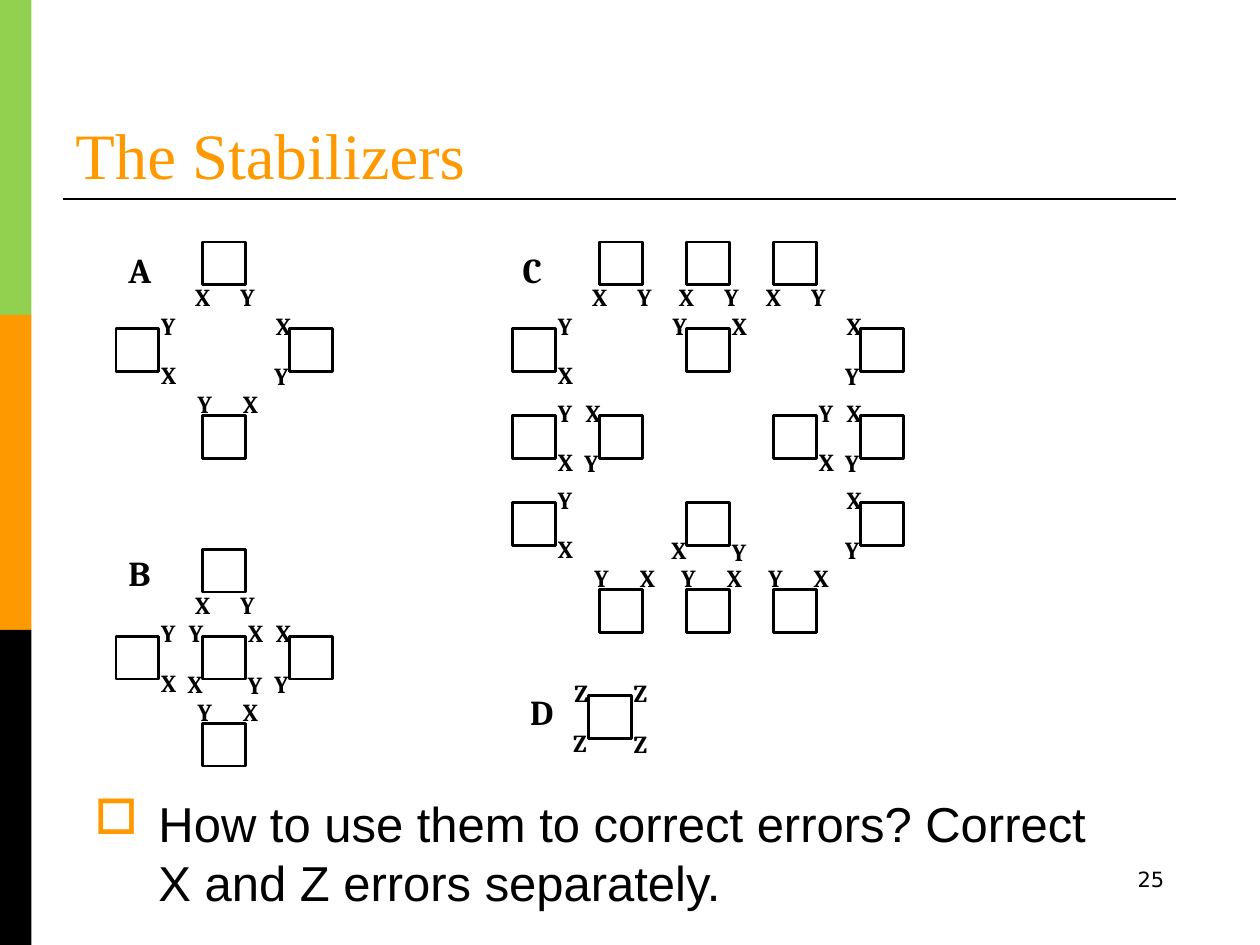
from lxml import etree
from pptx import Presentation
from pptx.dml.color import RGBColor
from pptx.enum.shapes import MSO_CONNECTOR, MSO_SHAPE
from pptx.enum.text import MSO_ANCHOR, MSO_AUTO_SIZE, PP_ALIGN
from pptx.oxml.ns import qn
from pptx.util import Inches, Pt

BLACK = RGBColor(0x00, 0x00, 0x00)
WHITE = RGBColor(0xFF, 0xFF, 0xFF)
GREEN = RGBColor(0x92, 0xD0, 0x50)
ORANGE = RGBColor(0xFF, 0x99, 0x00)

SIDE = 0.34   # edge of a square
PITCH = 0.69  # distance between neighbouring squares

deck = Presentation()
deck.slide_width, deck.slide_height = Inches(10), Inches(7.5)
page = deck.slides.add_slide(deck.slide_layouts[6])


def add_text(text, left, top, width, height, font, size, color=BLACK,
             bold=False, wrap=True):
    box = page.shapes.add_textbox(Inches(left), Inches(top),
                                  Inches(width), Inches(height))
    frame = box.text_frame
    frame.text = text
    frame.word_wrap = wrap
    frame.auto_size = MSO_AUTO_SIZE.NONE if wrap else MSO_AUTO_SIZE.SHAPE_TO_FIT_TEXT
    span = frame.paragraphs[0].runs[0]
    span.font.name, span.font.size = font, Pt(size)
    span.font.color.rgb, span.font.bold = color, bold
    return frame


def add_rectangle(left, top, width, height, fill):
    box = page.shapes.add_shape(MSO_SHAPE.RECTANGLE, Inches(left), Inches(top),
                                Inches(width), Inches(height))
    box.shadow.inherit = False
    box.fill.solid()
    box.fill.fore_color.rgb = fill
    return box


# Colour bars on the left edge
for index, color in enumerate((GREEN, ORANGE, BLACK)):
    add_rectangle(0, 2.5 * index, 0.25, 2.5, color).line.fill.background()

# Title and rule
title = add_text("The Stabilizers", 0.5, 0.25, 8.75, 1.33,
                 "Times New Roman", 37, ORANGE)
title.vertical_anchor = MSO_ANCHOR.BOTTOM
rule = page.shapes.add_connector(MSO_CONNECTOR.STRAIGHT, Inches(0.5), Inches(1.58),
                                 Inches(9.33), Inches(1.58))
rule.line.color.rgb, rule.line.width = BLACK, Pt(1.5)
etree.SubElement(rule._element.spPr, qn("a:effectLst"))

# Operators around a square: letter and offset from the square's top left
TOP_CORNERS = [("Y", -0.21, -0.19), ("X", 0.26, -0.19)]
BOTTOM_CORNERS = [("X", -0.22, 0.21), ("Y", 0.26, 0.22)]
ALL_CORNERS = TOP_CORNERS + BOTTOM_CORNERS
OPERATORS = {
    "v": [("X", -0.16, 0.27), ("Y", 0.2, 0.27)],
    "^": [("Y", -0.14, -0.26), ("X", 0.22, -0.26)],
    ">": [("Y", 0.26, -0.19), ("X", 0.26, 0.2)],
    "<": [("X", -0.21, -0.19), ("Y", -0.22, 0.21)],
    "t": TOP_CORNERS,
    "b": BOTTOM_CORNERS,
    "o": ALL_CORNERS,
    "z": [("Z", x, y) for _, x, y in ALL_CORNERS],
}

# Stabilizers: name, name position, grid origin, grid rows
STABILIZERS = [
    ("A", 0.92, 1.92, 0.92, 1.92, [" v ", "> <", " ^ "]),
    ("B", 0.92, 4.33, 0.92, 4.36, [" v ", ">o<", " ^ "]),
    ("C", 4.05, 1.92, 4.07, 1.92, [" vvv ", "> t <", ">< ><", "> b <", " ^^^ "]),
    ("D", 4.11, 5.43, 4.67, 5.52, ["z"]),
]
for name, name_left, name_top, grid_left, grid_top, rows in STABILIZERS:
    labels = []
    for row, kinds in enumerate(rows):
        for column, kind in enumerate(kinds):
            if kind == " ":
                continue
            left, top = grid_left + PITCH * column, grid_top + PITCH * row
            square = add_rectangle(left, top, SIDE, SIDE, WHITE)
            square.line.color.rgb, square.line.width = BLACK, Pt(1.5)
            labels += [(letter, left + x, top + y) for letter, x, y in OPERATORS[kind]]
    # Letters go above all the squares
    for letter, left, top in labels:
        width = 0.31 if letter == "X" else 0.33
        add_text(letter, left, top, width, 0.34, "Cambria", 14, bold=True, wrap=False)
    add_text(name, name_left, name_top, 0.37, 0.44, "Cambria", 20, bold=True, wrap=False)

# Bulleted question
question = add_text("How to use them to correct errors? Correct X and Z errors separately.",
                    0.65, 6.25, 8.1, 1, "Arial", 28)
para = question.paragraphs[0]
para.space_before = Pt(5.6)
properties = para._p.get_or_add_pPr()
properties.set("marL", str(Inches(0.51)))
properties.set("indent", str(Inches(-0.51)))
bullet_color = etree.SubElement(properties, qn("a:buClr"))
etree.SubElement(bullet_color, qn("a:srgbClr"), val=str(ORANGE))
etree.SubElement(properties, qn("a:buChar"), char="□")

# Page number
number = add_text("25", 7.17, 6.83, 2.17, 0.52, "DejaVu Sans", 12)
number.paragraphs[0].alignment = PP_ALIGN.RIGHT

deck.save("out.pptx")
